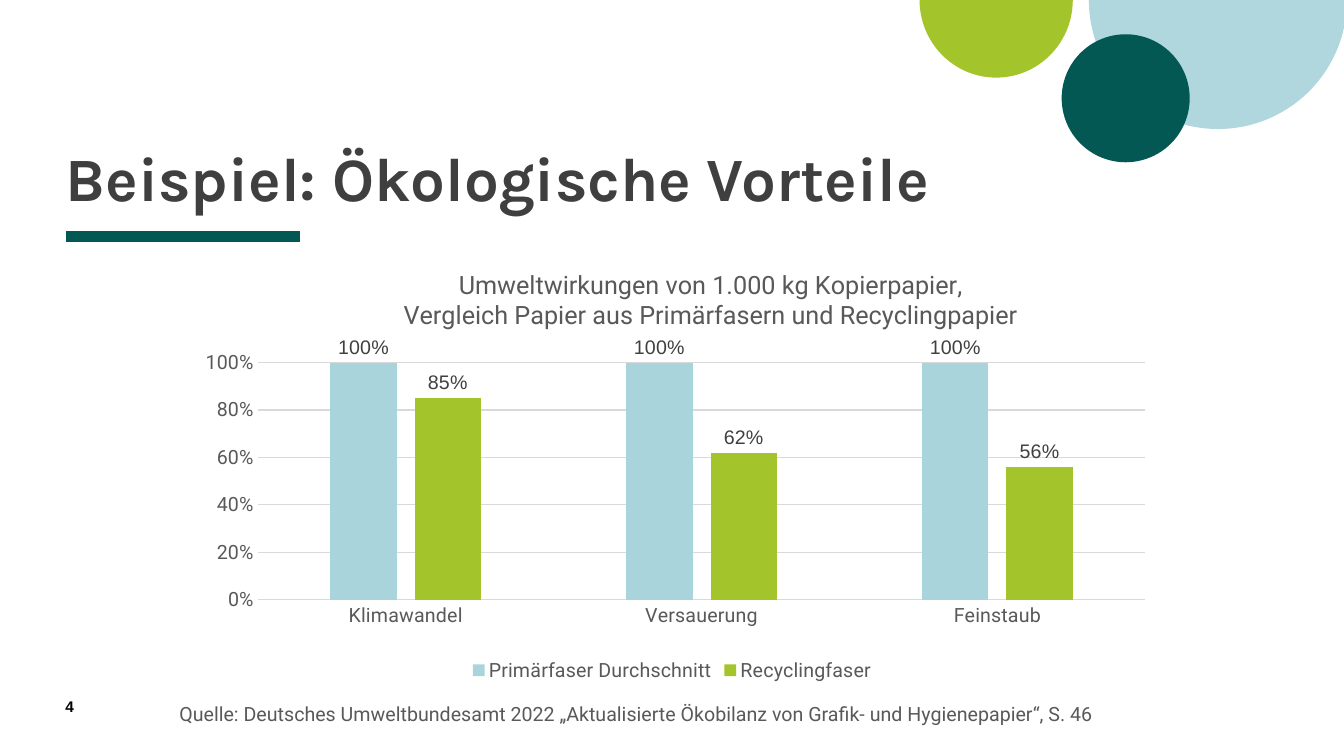
from dataclasses import dataclass

from lxml.etree import SubElement
from pptx import Presentation
from pptx.chart.data import CategoryChartData
from pptx.dml.color import RGBColor
from pptx.enum.chart import XL_CHART_TYPE as Chart, XL_LABEL_POSITION as LabelPos
from pptx.enum.chart import XL_LEGEND_POSITION as LegendPos, XL_TICK_MARK as Tick
from pptx.enum.shapes import MSO_CONNECTOR as Conn, MSO_SHAPE as Shape
from pptx.enum.text import MSO_ANCHOR as Anchor
from pptx.oxml.ns import qn
from pptx.util import Inches, Pt


@dataclass(frozen=True)
class Theme:
    dark: str = "035854"
    sky: str = "AFD7DD"
    sky_bar: str = "A9D4DB"
    lime: str = "A3C42A"
    heading: str = "3F3F3F"
    body: str = "595959"
    label: str = "404040"
    grid: str = "D9D9D9"
    black: str = "000000"
    head_font: str = "Karla"
    body_font: str = "Roboto"
    plain_font: str = "Arial"
    head_size: int = 44
    chart_title_size: int = 18
    body_size: int = 14
    number_size: int = 11
    base_size: int = 10


def rgb(code):
    return RGBColor.from_string(code)


def set_font(font, name, size, color, bold=False):
    for key, value in dict(name=name, size=Pt(size), bold=bold).items():
        setattr(font, key, value)
    font.color.rgb = rgb(color)


def set_layout(parent, **fractions):
    """Give a chart part a fixed place, in fractions of the chart."""
    layout = parent.find(qn("c:layout"))
    if layout is None:
        layout = parent.makeelement(qn("c:layout"))
        before = parent.find(qn("c:tx"))
        parent.insert(0 if before is None else parent.index(before) + 1, layout)
    manual = SubElement(layout, qn("c:manualLayout"))
    if "w" in fractions:
        SubElement(manual, qn("c:layoutTarget")).set("val", "inner")
    for axis in "xy":
        SubElement(manual, qn(f"c:{axis}Mode")).set("val", "edge")
    for key, value in fractions.items():
        SubElement(manual, qn(f"c:{key}")).set("val", str(value))


class SlideBuilder:
    def __init__(self, prs, theme):
        self.t = theme
        self.s = prs.slides.add_slide(prs.slide_layouts[6])

    def rule(self, x1, x2, y, color, width):
        ln = self.s.shapes.add_connector(
            Conn.STRAIGHT, Inches(x1), Inches(y), Inches(x2), Inches(y))
        ln.line.color.rgb = rgb(color)
        ln.line.width = Pt(width)
        SubElement(ln._element.spPr, qn("a:effectLst"))

    def disc(self, kind, x, y, w, h, color):
        sp = self.s.shapes.add_shape(kind, *map(Inches, (x, y, w, h)))
        sp.shadow.inherit = False
        sp.fill.solid()
        sp.fill.fore_color.rgb = rgb(color)
        sp.line.fill.background()
        if kind == Shape.PIE:  # lower half only: 0 to 180 degrees
            sp.adjustments[0], sp.adjustments[1] = 0, 108

    def text(self, box, words, font, inset=(0, 0), anchor=Anchor.TOP, spacing=1.0):
        tf = self.s.shapes.add_textbox(*map(Inches, box)).text_frame
        dx, dy = map(Inches, inset)
        style = dict(word_wrap=True, vertical_anchor=anchor, margin_left=dx,
                     margin_right=dx, margin_top=dy, margin_bottom=dy)
        for key, value in style.items():
            setattr(tf, key, value)
        p = tf.paragraphs[0]
        p.line_spacing = spacing
        r = p.add_run()
        r.text = words
        set_font(r.font, *font)

    def columns(self, box, title, cats, series):
        t = self.t
        data = CategoryChartData(number_format="0%")
        data.categories = cats
        for name, values, _ in series:
            data.add_series(name, values)
        chart = self.s.shapes.add_chart(
            Chart.COLUMN_CLUSTERED, *map(Inches, box), data).chart
        set_font(chart.font, t.plain_font, t.base_size, t.black)
        body = (t.body_font, t.body_size, t.body)

        # Title
        chart.has_title = True
        tf = chart.chart_title.text_frame
        tf.text = title
        for p in tf.paragraphs:
            for r in p.runs:
                set_font(r.font, t.body_font, t.chart_title_size, t.body)
        set_layout(chart.chart_title._element, x=0.23, y=0.02)

        # Legend
        chart.has_legend = True
        chart.legend.position = LegendPos.BOTTOM
        chart.legend.include_in_layout = False
        set_font(chart.legend.font, *body)

        # Axes
        cat, val = chart.category_axis, chart.value_axis
        for axis in (cat, val):
            axis.major_tick_mark = axis.minor_tick_mark = Tick.NONE
            set_font(axis.tick_labels.font, *body)
        for key, value in dict(minimum_scale=0, maximum_scale=1, major_unit=0.2).items():
            setattr(val, key, value)
        val.tick_labels.number_format = "0%"
        val.tick_labels.number_format_is_linked = False
        val.format.line.fill.background()
        for line in (cat.format.line, val.major_gridlines.format.line):
            line.color.rgb = rgb(t.grid)
            line.width = Pt(0.75)

        # Columns and their labels
        plot = chart.plots[0]
        for key, value in dict(gap_width=219, overlap=-27, vary_by_categories=False).items():
            setattr(plot, key, value)
        for ser, (_, _, color) in zip(plot.series, series):
            ser.format.fill.solid()
            ser.format.fill.fore_color.rgb = rgb(color)
            style = dict(show_value=True, position=LabelPos.OUTSIDE_END,
                         number_format="0%", number_format_is_linked=False)
            for key, value in style.items():
                setattr(ser.data_labels, key, value)
            set_font(ser.data_labels.font, t.plain_font, t.body_size, t.label)
        set_layout(chart._chartSpace.chart.plotArea, x=0.088, y=0.244, w=0.883, h=0.554)


def main():
    prs = Presentation()
    prs.slide_width, prs.slide_height = Inches(13.33), Inches(7.5)
    t = Theme()
    b = SlideBuilder(prs, t)

    # Decoration
    b.rule(0.65, 2.98, 2.35, t.dark, 8)
    b.disc(Shape.PIE, 10.8, -1.28, 2.56, 2.56, t.sky)
    b.disc(Shape.PIE, 9.12, -0.77, 1.52, 1.54, t.lime)
    b.disc(Shape.OVAL, 10.53, 0.34, 1.27, 1.27, t.dark)

    # Title and slide number
    b.text((0.65, 0.49, 10.69, 1.63), "Beispiel: Ökologische Vorteile",
           (t.head_font, t.head_size, t.heading, True), anchor=Anchor.BOTTOM, spacing=0.8)
    b.text((0.65, 6.92, 0.57, 0.27), "4", (t.plain_font, t.number_size, t.black, True))

    # Chart and its source
    b.columns(
        (1.68, 2.56, 9.97, 4.25),
        "Umweltwirkungen von 1.000 kg Kopierpapier,\n"
        "Vergleich Papier aus Primärfasern und Recyclingpapier",
        ("Klimawandel", "Versauerung", "Feinstaub"),
        (("Primärfaser Durchschnitt", (1, 1, 1), t.sky_bar),
         ("Recyclingfaser", (0.85, 0.62, 0.56), t.lime)))
    b.text((1.68, 6.91, 9.42, 0.57),
           "Quelle: Deutsches Umweltbundesamt 2022 „Aktualisierte Ökobilanz von "
           "Grafik- und Hygienepapier“, S. 46",
           (t.body_font, t.body_size, t.body), inset=(0.1, 0.05))
    prs.save("out.pptx")


if __name__ == "__main__":
    main()
